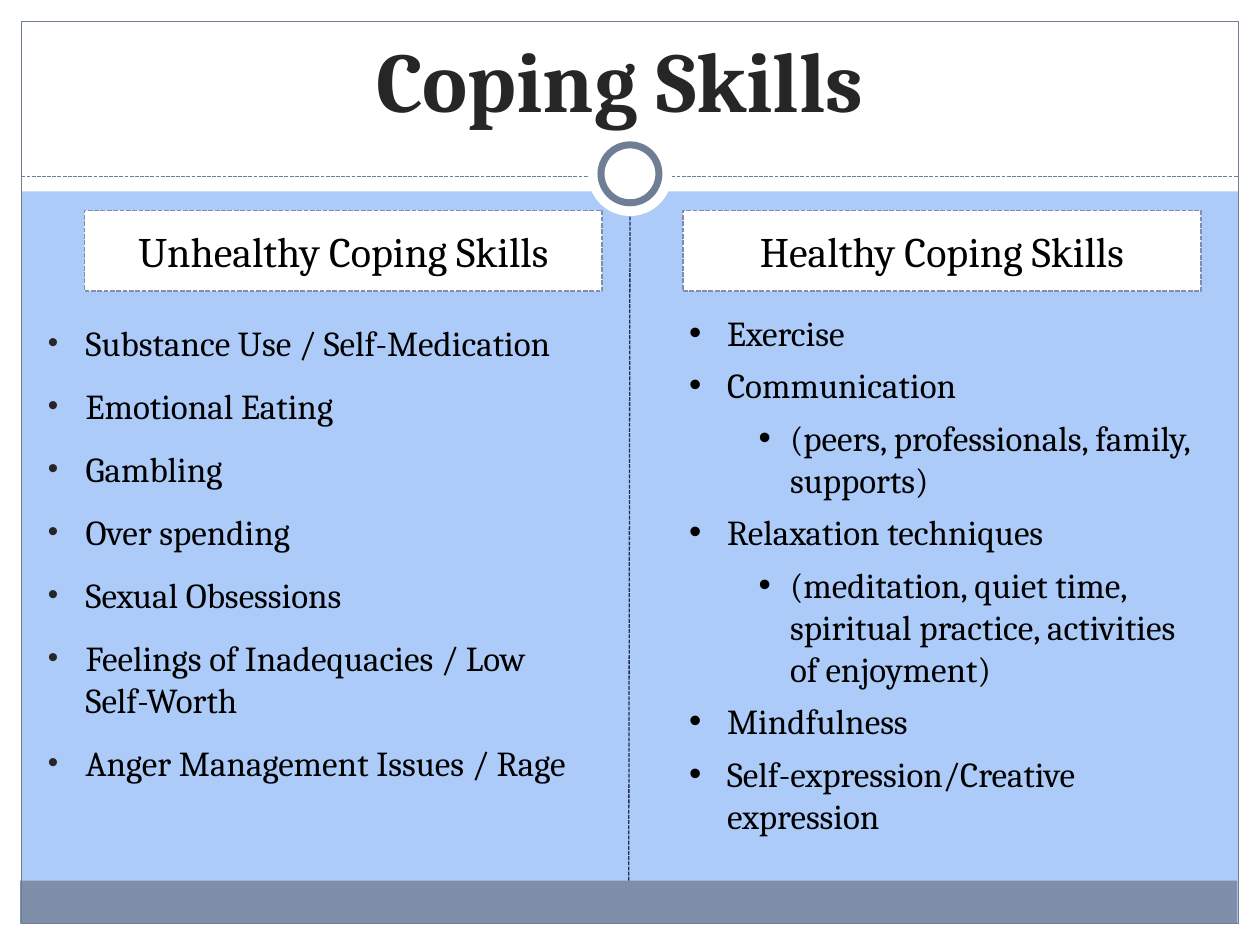
import pptx
import pptx.util
import pptx.dml.color
import pptx.enum.dml
import pptx.enum.shapes
import pptx.enum.text
import pptx.oxml
import pptx.oxml.ns
from lxml import etree

Inches, Pt = pptx.util.Inches, pptx.util.Pt
RGB = pptx.dml.color.RGBColor.from_string
SHAPE = pptx.enum.shapes.MSO_SHAPE
ANCHOR = pptx.enum.text.MSO_ANCHOR
CENTER = pptx.enum.text.PP_ALIGN.CENTER
DASH = pptx.enum.dml.MSO_LINE.SQUARE_DOT
qn = pptx.oxml.ns.qn

THEME = {
    "font": "Cambria",
    "background": "ACCBF9", "paper": "FFFFFF", "band": "7F8FA9",
    "rule": "707E95", "divider": "242852", "title": "262626", "text": "000000",
    "title_size": 48.6, "heading_size": 24, "list_size": 20,
}

prs = pptx.Presentation()
prs.slide_width, prs.slide_height = Inches(10), Inches(7.5)
slide = prs.slides.add_slide(prs.slide_layouts.get_by_name("Comparison"))
slide.background.fill.solid()
slide.background.fill.fore_color.rgb = RGB(THEME["background"])
placeholders = {ph.placeholder_format.idx: ph for ph in slide.placeholders}


def fill_and_line(shape, fill=None, line=None, width=0.75, dash=None):
    if fill:
        shape.fill.solid()
        shape.fill.fore_color.rgb = RGB(THEME[fill])
    else:
        shape.fill.background()
    if line:
        shape.line.color.rgb = RGB(THEME[line])
        shape.line.width = Pt(width)
        shape.line.dash_style = dash
    else:
        shape.line.fill.background()


def style_text(paragraph, size, color, bold=False):
    for run in paragraph.runs:
        run.font.name = THEME["font"]
        run.font.size = Pt(THEME[size])
        run.font.color.rgb = RGB(THEME[color])
        run.font.bold = bold


# White margins, footer band and page outline
for box, fill, line in [
    ((0, 7.33, 10, 0.17), "paper", None),
    ((0, 0, 10, 1.52), "paper", None),
    ((0, 0, 0.17, 7.5), "paper", None),
    ((9.83, 0, 0.17, 7.5), "paper", None),
    ((0.16, 6.99, 9.66, 0.34), "band", None),
    ((0.17, 0.17, 9.66, 7.16), None, "rule"),
]:
    panel = slide.shapes.add_shape(SHAPE.RECTANGLE, *map(Inches, box))
    panel.shadow.inherit = False
    fill_and_line(panel, fill, line)

# Dashed header rule and column divider
for ends, color in [((0.17, 1.4, 9.83, 1.4), "rule"),
                    ((4.99, 6.99, 5, 1.72), "divider")]:
    rule = slide.shapes.add_connector(
        pptx.enum.shapes.MSO_CONNECTOR.STRAIGHT, *map(Inches, ends))
    rule.line.color.rgb = RGB(THEME[color])
    rule.line.width = Pt(0.75)
    rule.line.dash_style = DASH
    etree.SubElement(rule._element.spPr, qn("a:effectLst"))

# Ring on the header rule
for diameter, line in [(0.67, None), (0.46, "rule")]:
    ring = slide.shapes.add_shape(
        SHAPE.OVAL, Inches(5 - diameter / 2), Inches(1.38 - diameter / 2),
        Inches(diameter), Inches(diameter))
    ring.shadow.inherit = False
    fill_and_line(ring, "paper", line, 4)

# Title, headings and lists stand in front of the frame
for placeholder in placeholders.values():
    slide.shapes._spTree.append(placeholder._element)

# Title and column headings
for idx, box, text, size, color, anchor in [
    (0, (0.33, 0.25, 9.33, 0.83), "Coping Skills ",
     "title_size", "title", ANCHOR.BOTTOM),
    (1, (0.67, 1.67, 4.11, 0.64), "Unhealthy Coping Skills",
     "heading_size", "text", ANCHOR.MIDDLE),
    (3, (5.42, 1.67, 4.11, 0.64), "Healthy Coping Skills",
     "heading_size", "text", ANCHOR.MIDDLE),
]:
    heading = placeholders[idx]
    heading.left, heading.top, heading.width, heading.height = map(Inches, box)
    is_title = idx == 0
    fill_and_line(heading, "paper", None if is_title else "band", 0.9, DASH)
    frame = heading.text_frame
    frame.text = text
    frame.auto_size = pptx.enum.text.MSO_AUTO_SIZE.NONE
    frame.vertical_anchor = anchor
    frame.paragraphs[0].alignment = CENTER
    style_text(frame.paragraphs[0], size, color, bold=is_title)

# Bulleted lists: (level, text)
unhealthy = [(0, text) for text in [
    "Substance Use / Self-Medication",
    "Emotional Eating",
    "Gambling",
    "Over spending",
    "Sexual Obsessions",
    "Feelings of Inadequacies / Low Self-Worth",
    "Anger Management Issues / Rage",
]]
healthy = [
    (1, "Exercise"),
    (1, "Communication"),
    (2, "(peers, professionals, family, supports)"),
    (1, "Relaxation techniques"),
    (2, "(meditation, quiet time, spiritual practice, activities of enjoyment)"),
    (1, "Mindfulness"),
    (1, "Self-expression/Creative expression"),
]
INDENTS = {0: (0.3, -0.3), 1: (0.42, -0.3), 2: (0.92, -0.25)}

for idx, box, items, space_before, bullet_color, bullet_size in [
    (2, (0.28, 2.5, 4.5, 4.29), unhealthy, 6, "title", 85),
    (4, (5.25, 2.42, 4.42, 4.2), healthy, 0, "text", 100),
]:
    skills = placeholders[idx]
    skills.left, skills.top, skills.width, skills.height = map(Inches, box)
    frame = skills.text_frame
    frame.text = "\n".join(text for _, text in items)
    frame.auto_size = pptx.enum.text.MSO_AUTO_SIZE.NONE
    for paragraph, (level, _) in zip(frame.paragraphs, items):
        paragraph.level = level
        paragraph.space_before, paragraph.space_after = Pt(space_before), Pt(6)
        style_text(paragraph, "list_size", "text")
        margin, indent = INDENTS[level]
        properties = paragraph._p.get_or_add_pPr()
        properties.set("marL", str(Inches(margin)))
        properties.set("indent", str(Inches(indent)))
        color = etree.SubElement(properties, qn("a:buClr"))
        etree.SubElement(color, qn("a:srgbClr"), val=THEME[bullet_color])
        etree.SubElement(properties, qn("a:buSzPct"), val=str(bullet_size * 1000))
        etree.SubElement(properties, qn("a:buFont"), typeface="Arial")
        etree.SubElement(properties, qn("a:buChar"), char="•")

prs.save("out.pptx")
